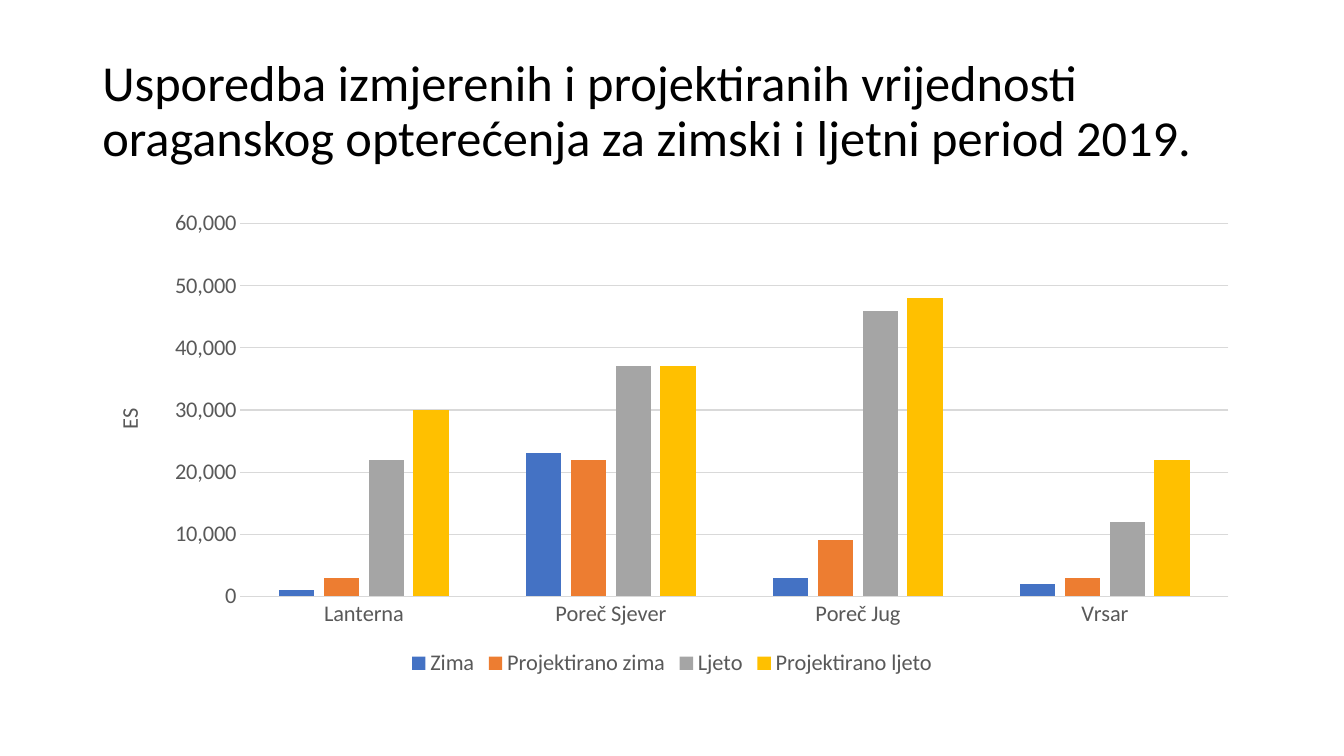
"""Builds a slide comparing measured and projected organic load by plant."""
from lxml.etree import SubElement
from pptx import Presentation
from pptx.chart.data import CategoryChartData
from pptx.dml.color import RGBColor
from pptx.enum.chart import XL_CHART_TYPE, XL_LEGEND_POSITION, XL_TICK_MARK
from pptx.enum.text import MSO_ANCHOR
from pptx.oxml.ns import qn
from pptx.util import Pt

PX = 9525
CHART_WIDTH, CHART_HEIGHT = 1104, 457
THEME = {
    "font": "Calibri",
    "title_size": Pt(36),
    "chart_size": Pt(16),
    "title": RGBColor.from_string("000000"),
    "label": RGBColor.from_string("595959"),
    "line": RGBColor.from_string("D9D9D9"),
    "line_width": Pt(0.75),
    "series": ["4472C4", "ED7D31", "A5A5A5", "FFC000"],
}
PLANTS = ["Lanterna", "Poreč Sjever", "Poreč Jug", "Vrsar"]
LOADS = {
    "Zima": [1000, 23000, 3000, 2000],
    "Projektirano zima": [3000, 22000, 9000, 3000],
    "Ljeto": [22000, 37000, 46000, 12000],
    "Projektirano ljeto": [30000, 37000, 48000, 22000],
}


def style_font(font, size, color):
    font.name = THEME["font"]
    font.size = size
    font.bold = False
    font.color.rgb = color


def place(element, **settings):
    layout = element.find(qn("c:layout"))
    if layout is None:
        layout = element.makeelement(qn("c:layout"))
        element.insert(0, layout)
    manual = SubElement(layout, qn("c:manualLayout"))
    for name, value in settings.items():
        SubElement(manual, qn(f"c:{name}")).set("val", str(value))


presentation = Presentation()
presentation.slide_width = 1280 * PX
presentation.slide_height = 720 * PX
slide = presentation.slides.add_slide(presentation.slide_layouts[6])

title_box = slide.shapes.add_textbox(88 * PX, 38 * PX, 1104 * PX, 139 * PX)
title_frame = title_box.text_frame
title_frame.word_wrap = True
title_frame.vertical_anchor = MSO_ANCHOR.MIDDLE
paragraph = title_frame.paragraphs[0]
paragraph.text = (
    "Usporedba izmjerenih i projektiranih vrijednosti "
    "oraganskog opterećenja za zimski i ljetni period 2019."
)
paragraph.line_spacing = 0.9
style_font(paragraph.font, THEME["title_size"], THEME["title"])

load_data = CategoryChartData(number_format="#,##0")
load_data.categories = PLANTS
for name, values in LOADS.items():
    load_data.add_series(name, values)
chart = slide.shapes.add_chart(
    XL_CHART_TYPE.COLUMN_CLUSTERED,
    88 * PX, 192 * PX, CHART_WIDTH * PX, CHART_HEIGHT * PX, load_data,
).chart
chart.has_title = False
style_font(chart.font, THEME["chart_size"], THEME["label"])

plot = chart.plots[0]
plot.gap_width = 219
plot.overlap = -27
plot.vary_by_categories = False
for series, color in zip(plot.series, THEME["series"]):
    series.format.fill.solid()
    series.format.fill.fore_color.rgb = RGBColor.from_string(color)
    series.invert_if_negative = False

plant_axis = chart.category_axis
load_axis = chart.value_axis
for axis in (plant_axis, load_axis):
    axis.major_tick_mark = XL_TICK_MARK.NONE
    axis.minor_tick_mark = XL_TICK_MARK.NONE
    style_font(axis.tick_labels.font, THEME["chart_size"], THEME["label"])

load_axis.minimum_scale = 0
load_axis.maximum_scale = 60000
load_axis.major_unit = 10000
load_axis.tick_labels.number_format = "#,##0"
load_axis.tick_labels.number_format_is_linked = False
load_axis.format.line.fill.background()
load_axis.has_major_gridlines = True
for line in (plant_axis.format.line, load_axis.major_gridlines.format.line):
    line.color.rgb = THEME["line"]
    line.width = THEME["line_width"]

axis_title = load_axis.axis_title
axis_title.text_frame.text = "ES"
style_font(axis_title.text_frame.paragraphs[0].font, THEME["chart_size"], THEME["label"])
axis_body = axis_title._element.find(".//" + qn("a:bodyPr"))
axis_body.set("rot", "-5400000")
axis_body.set("vert", "horz")
place(axis_title._element, xMode="edge", yMode="edge",
      x=17 / CHART_WIDTH, y=193 / CHART_HEIGHT)

chart.has_legend = True
chart.legend.position = XL_LEGEND_POSITION.BOTTOM
chart.legend.include_in_layout = False
style_font(chart.legend.font, THEME["chart_size"], THEME["label"])

place(chart._chartSpace.chart.plotArea, layoutTarget="inner", xMode="edge", yMode="edge",
      x=141 / CHART_WIDTH, y=21 / CHART_HEIGHT,
      w=941 / CHART_WIDTH, h=355 / CHART_HEIGHT)

presentation.save("out.pptx")
